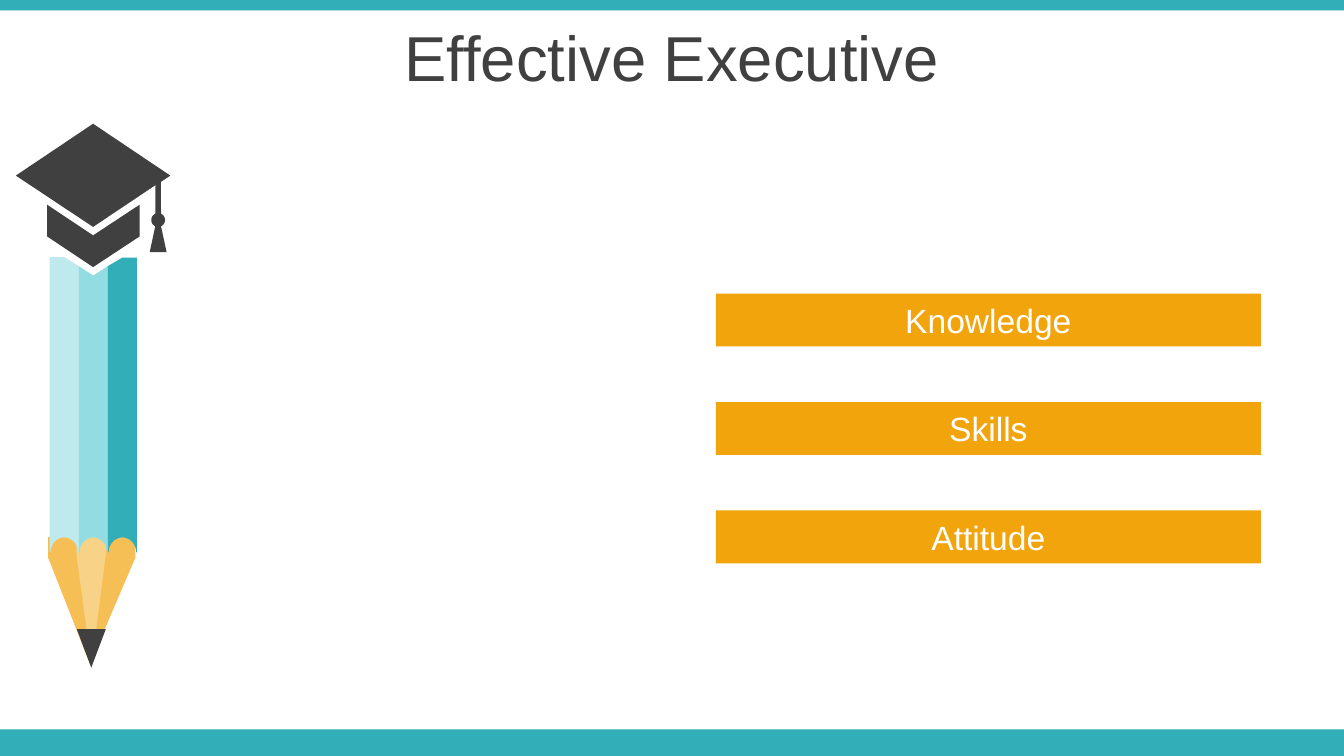
from math import cos, radians, sin

from pptx import Presentation
from pptx.dml.color import RGBColor
from pptx.enum.shapes import MSO_SHAPE
from pptx.enum.text import MSO_ANCHOR, PP_ALIGN
from pptx.util import Cm, Pt

COLORS = {
    "teal": "32AEB8", "mid_teal": "92DCE2", "pale_teal": "BEEAED",
    "orange": "F2A40D", "wood": "F6BF56", "light_wood": "F8D286",
    "dark": "404040", "white": "FFFFFF",
}
FONT = "Arial"
WIDTH, HEIGHT = 25.4, 14.29

TITLE = "Effective Executive"
LABELS = ["Knowledge", "Skills", "Attitude"]
LABEL_LEFT, LABEL_TOP, LABEL_W, LABEL_H, LABEL_STEP = 13.53, 5.55, 10.3, 1, 2.05
BARS = [(HEIGHT - 0.5, 0.5), (0, 0.2)]  # top, height

# Pencil, in cm
STRIPE_LEFT, STRIPE_W, STRIPE_BOTTOM = 0.94, 0.55, 10.44
STRIPES = [  # colour, top edge as (share of stripe width, y)
    ("pale_teal", [(0, 4.86), (0.5, 4.86), (1, 5.03)]),
    ("mid_teal", [(0, 5.03), (0.5, 5.21), (1, 5.03)]),
    ("teal", [(0, 5.03), (0.5, 4.87), (1, 4.87)]),
]
WOOD = [
    ("wood", [(0.91, 10.15), (2.56, 10.16), (2.56, 10.54), (1.7, 12.55), (0.91, 10.54)]),
    ("light_wood", [(1.45, 10.13), (2.01, 10.13), (2.01, 10.41), (1.73, 12.57), (1.45, 10.52)]),
]
LEAD = (1.45, 11.89, 0.55, 0.73)


def arc(cx, cy, rx, ry, start, end, steps=16):
    """Points on an ellipse, angles in degrees, clockwise from the right."""
    angles = [radians(start + (end - start) * i / steps) for i in range(steps + 1)]
    return [(cx + rx * cos(a), cy + ry * sin(a)) for a in angles]


KNOB = (2.99, 4.16, 0.13, 0.13)
CAP = [
    [(0.89, 3.87), (1.76, 4.45), (2.64, 3.87), (2.64, 4.47), (1.76, 5.05), (0.89, 4.47)],
    [(1.76, 2.34), (3.22, 3.32), (3.04, 3.44), *arc(*KNOB, -65, 65),
     (3.15, 4.77), (2.83, 4.77), *arc(*KNOB, 115, 245),
     (2.94, 3.5), (1.76, 4.29), (0.3, 3.32)],
]


def paint(sp, color):
    sp.shadow.inherit = False
    sp.fill.solid()
    sp.fill.fore_color.rgb = RGBColor.from_string(COLORS[color])
    sp.line.fill.background()


def add_block(shapes, box, color, kind=MSO_SHAPE.RECTANGLE):
    sp = shapes.add_shape(kind, *map(Cm, box))
    paint(sp, color)
    return sp


def add_outline(shapes, contours, color):
    first, *others = [[(Cm(x), Cm(y)) for x, y in c] for c in contours]
    fb = shapes.build_freeform(*first[0])
    fb.add_line_segments(first[1:])
    for points in others:
        fb.move_to(*points[0])
        fb.add_line_segments(points[1:])
    paint(fb.convert_to_shape(), color)


def write(sp, text, size, color):
    tf = sp.text_frame
    tf.word_wrap = True
    tf.vertical_anchor = MSO_ANCHOR.MIDDLE
    tf.margin_left = tf.margin_right = tf.margin_top = tf.margin_bottom = Cm(0.13)
    p = tf.paragraphs[0]
    p.text = text
    p.alignment = PP_ALIGN.CENTER
    p.font.name, p.font.size = FONT, Pt(size)
    p.font.color.rgb = RGBColor.from_string(COLORS[color])
    return p


def add_pencil(shapes):
    for color, points in WOOD:
        add_outline(shapes, [points], color)
    for i, (color, top) in enumerate(STRIPES):
        left = STRIPE_LEFT + i * STRIPE_W
        edge = [(left + share * STRIPE_W, y) for share, y in top]
        scallop = arc(left + STRIPE_W / 2, STRIPE_BOTTOM, 0.26, 0.28, 0, -180)
        bottom = [(left + STRIPE_W, STRIPE_BOTTOM), *scallop, (left, STRIPE_BOTTOM)]
        add_outline(shapes, [edge + bottom], color)
    add_block(shapes, LEAD, "dark", MSO_SHAPE.ISOSCELES_TRIANGLE).rotation = 180
    add_outline(shapes, CAP, "dark")


def main():
    prs = Presentation()
    prs.slide_width, prs.slide_height = Cm(WIDTH), Cm(HEIGHT)
    s = prs.slides.add_slide(prs.slide_layouts[6])
    for top, height in BARS:
        add_block(s.shapes, (0, top, WIDTH, height), "teal")
    for i, label in enumerate(LABELS):
        box = (LABEL_LEFT, LABEL_TOP + i * LABEL_STEP, LABEL_W, LABEL_H)
        write(add_block(s.shapes, box, "orange"), label, 18, "white")
    title = s.shapes.add_textbox(Cm(0), Cm(0.36), Cm(WIDTH), Cm(1.6))
    write(title, TITLE, 34, "dark").line_spacing = 0.9
    add_pencil(s.shapes.add_group_shape().shapes)
    prs.save("out.pptx")


if __name__ == "__main__":
    main()
